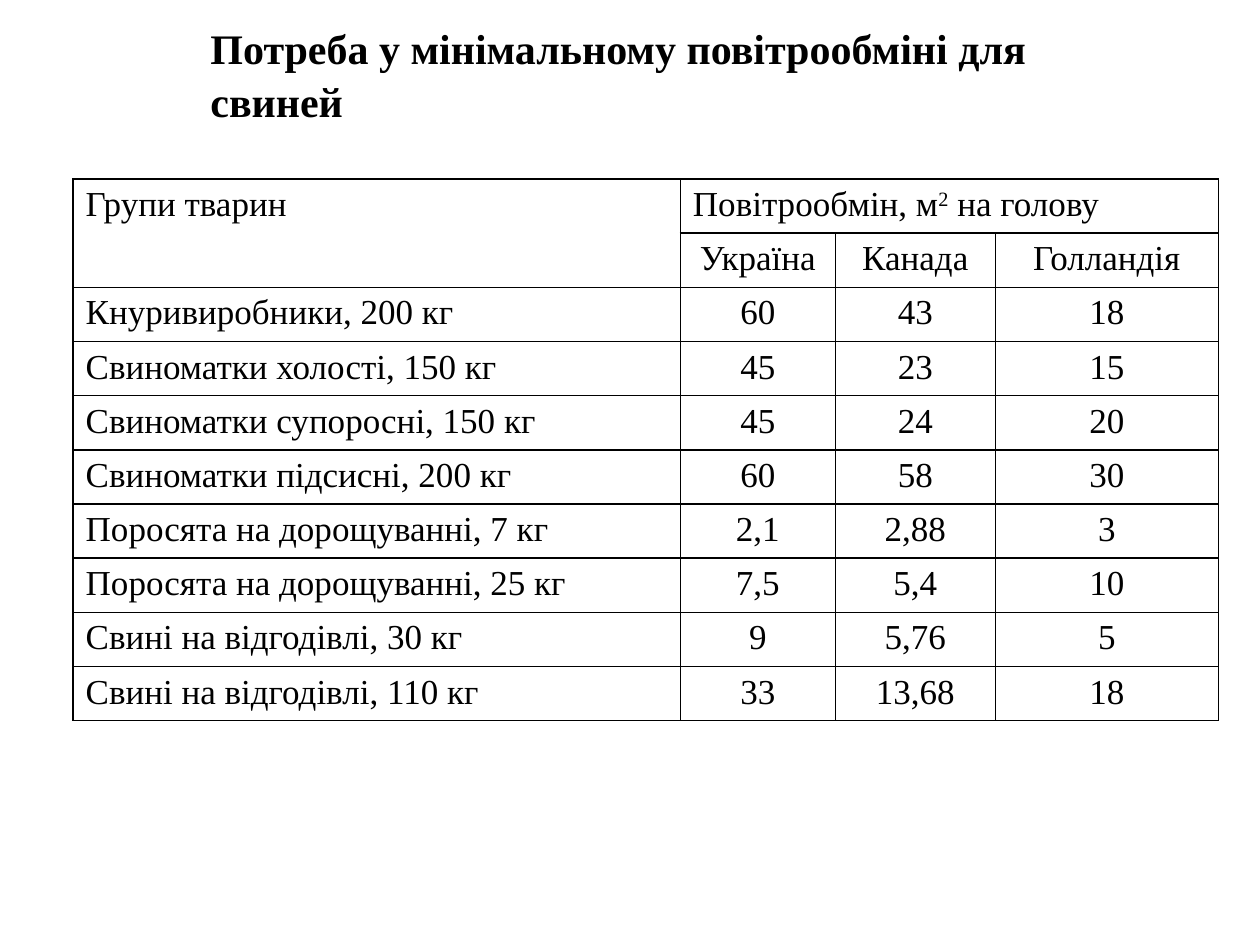
import pptx
import pptx.dml.color
import pptx.enum.text
import pptx.oxml
import pptx.oxml.ns
import pptx.util

FONT = "Times New Roman"
INK = "000000"
ALIGN = pptx.enum.text.PP_ALIGN


def write(paragraph, text, size, bold=False):
    run = paragraph.add_run()
    run.text = text
    for key, value in {"name": FONT, "size": pptx.util.Pt(size), "bold": bold}.items():
        setattr(run.font, key, value)
    run.font.color.rgb = pptx.dml.color.RGBColor.from_string(INK)
    return run


def outline(cell):
    properties = cell._tc.get_or_add_tcPr()
    for side in "LRTB":
        properties.append(pptx.oxml.parse_xml(
            f'<a:ln{side} {pptx.oxml.ns.nsdecls("a")} w="{pptx.util.Pt(1)}">'
            f'<a:solidFill><a:srgbClr val="{INK}"/></a:solidFill></a:ln{side}>'))
    cell.fill.background()


deck = pptx.Presentation()
deck.slide_width = pptx.util.Inches(10)
deck.slide_height = pptx.util.Inches(7.5)
slide = deck.slides.add_slide(deck.slide_layouts[5])

heading = slide.shapes.title
heading_place = {"left": 1.42, "top": 0.25, "width": 8.03, "height": 0.91}
for key, value in heading_place.items():
    setattr(heading, key, pptx.util.Inches(value))
heading_frame = {
    "margin_left": pptx.util.Inches(0.25),
    "margin_right": pptx.util.Inches(0.32),
    "margin_top": 0,
    "margin_bottom": pptx.util.Inches(0.26),
    "word_wrap": True,
    "auto_size": pptx.enum.text.MSO_AUTO_SIZE.NONE,
    "vertical_anchor": pptx.enum.text.MSO_ANCHOR.MIDDLE,
}
for key, value in heading_frame.items():
    setattr(heading.text_frame, key, value)
heading_line = heading.text_frame.paragraphs[0]
heading_line.alignment = ALIGN.LEFT
heading_line.line_spacing = 1.07
write(heading_line, "Потреба у мінімальному повітрообміні для свиней", 24, True)

needs = [
    ("Групи тварин", "", "", ""),
    ("", "Україна", "Канада", "Голландія"),
    ("Кнуривиробники, 200 кг", "60", "43", "18"),
    ("Свиноматки холості, 150 кг", "45", "23", "15"),
    ("Свиноматки супоросні, 150 кг", "45", "24", "20"),
    ("Свиноматки підсисні, 200 кг", "60", "58", "30"),
    ("Поросята на дорощуванні, 7 кг", "2,1", "2,88", "3"),
    ("Поросята на дорощуванні, 25 кг", "7,5", "5,4", "10"),
    ("Свині на відгодівлі, 30 кг", "9", "5,76", "5"),
    ("Свині на відгодівлі, 110 кг", "33", "13,68", "18"),
]
column_widths = [4.82, 1.23, 1.27, 1.77]
row_height = pptx.util.Inches(0.43)
air_exchange = slide.shapes.add_table(
    len(needs), len(column_widths), pptx.util.Inches(0.58), pptx.util.Inches(1.42),
    pptx.util.Inches(sum(column_widths)), row_height * len(needs)).table
for banding in ("first_row", "horz_banding"):
    setattr(air_exchange, banding, False)
for column, width in zip(air_exchange.columns, column_widths):
    column.width = pptx.util.Inches(width)

for row, values in enumerate(needs):
    air_exchange.rows[row].height = row_height
    for column, value in enumerate(values):
        cell = air_exchange.cell(row, column)
        outline(cell)
        if value:
            entry = cell.text_frame.paragraphs[0]
            entry.alignment = ALIGN.CENTER if column else ALIGN.LEFT
            write(entry, value, 20)

air_exchange.cell(0, 0).merge(air_exchange.cell(1, 0))
air_exchange.cell(0, 1).merge(air_exchange.cell(0, 3))
unit_line = air_exchange.cell(0, 1).text_frame.paragraphs[0]
write(unit_line, "Повітрообмін, м", 20)
exponent = write(unit_line, "2", 20)
exponent.font._element.set("baseline", "30000")
write(unit_line, " на голову", 20)

deck.save("out.pptx")
